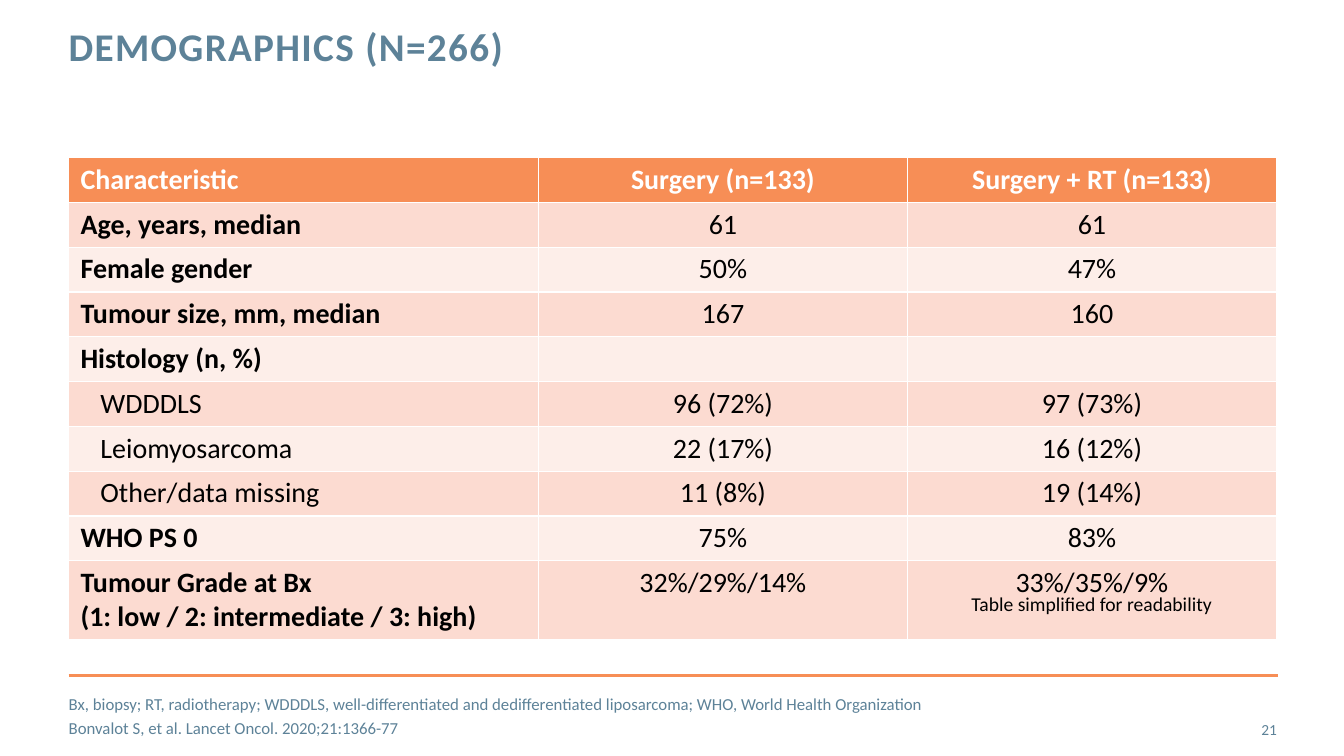
import pptx
import pptx.util
import pptx.dml.color
import pptx.enum.shapes
import pptx.enum.text
import pptx.oxml
import pptx.oxml.ns

Cm, Pt = pptx.util.Cm, pptx.util.Pt
RGBColor = pptx.dml.color.RGBColor
Align = pptx.enum.text.PP_ALIGN
Anchor = pptx.enum.text.MSO_ANCHOR

ORANGE = RGBColor(0xF7, 0x8E, 0x56)
SLATE = RGBColor(0x5D, 0x82, 0x98)
BLACK = RGBColor(0, 0, 0)
WHITE = RGBColor(0xFF, 0xFF, 0xFF)
BANDS = (RGBColor(0xFD, 0xEE, 0xE9), RGBColor(0xFC, 0xDB, 0xD1))

LEFT = 1.73
COLUMN_WIDTHS = (11.84, 9.3, 9.3)
ROW_HEIGHT, LAST_ROW_HEIGHT = 1.13, 1.97
ROWS = [
    ("Characteristic", "Surgery (n=133)", "Surgery + RT (n=133)"),
    ("Age, years, median", "61", "61"),
    ("Female gender", "50%", "47%"),
    ("Tumour size, mm, median", "167", "160"),
    ("Histology (n, %)", "", ""),
    ("WDDDLS", "96 (72%)", "97 (73%)"),
    ("Leiomyosarcoma", "22 (17%)", "16 (12%)"),
    ("Other/data missing", "11 (8%)", "19 (14%)"),
    ("WHO PS 0", "75%", "83%"),
    ("Tumour Grade at Bx\n(1: low / 2: intermediate / 3: high)", "32%/29%/14%", "33%/35%/9%"),
]
SUBTYPES = {"WDDDLS", "Leiomyosarcoma", "Other/data missing"}
FOOTNOTES = (
    "Bx, biopsy; RT, radiotherapy; WDDDLS, well-differentiated and dedifferentiated "
    "liposarcoma; WHO, World Health Organization\n"
    "Bonvalot S, et al. Lancet Oncol. 2020;21:1366-77"
)


def apply(target, values):
    for name, value in values.items():
        setattr(target, name, value)


class SlideBuilder:
    font_name = "Calibri"
    no_margins = dict.fromkeys(("margin_left", "margin_top", "margin_right", "margin_bottom"), 0)

    def __init__(self, page):
        self.page = page

    def fill_text(self, frame, text, size, color, bold=False, align=Align.LEFT, gap=0, indent=0):
        frame.text = text
        for number, para in enumerate(frame.paragraphs):
            properties = para._p.get_or_add_pPr()
            properties.set("marL", str(Cm(indent)))
            properties.set("indent", "0")
            properties.append(pptx.oxml.parse_xml(
                "<a:buNone %s/>" % pptx.oxml.ns.nsdecls("a")))
            apply(para, {"alignment": align, "space_before": Pt(gap if number else 0)})
            for span in para.runs:
                apply(span.font, {"name": self.font_name, "size": Pt(size), "bold": bold})
                span.font.color.rgb = color

    def place(self, shape, left, top, width, height):
        apply(shape, {"left": Cm(left), "top": Cm(top), "width": Cm(width), "height": Cm(height)})

    def title(self, text):
        shape = self.page.shapes.title
        self.place(shape, LEFT, 0.69, 24.28, 2.24)
        frame = shape.text_frame
        apply(frame, {**self.no_margins, "vertical_anchor": Anchor.TOP, "word_wrap": True})
        self.fill_text(frame, text, 28, SLATE, bold=True)
        para = frame.paragraphs[0]
        para.line_spacing = Pt(30)
        para.runs[0]._r.get_or_add_rPr().set("spc", "100")

    def footnotes(self, text):
        shape = self.page.placeholders[1]
        self.place(shape, LEFT, 17.53, 22.56, 1.02)
        frame = shape.text_frame
        apply(frame, {**self.no_margins, "vertical_anchor": Anchor.MIDDLE, "word_wrap": True})
        self.fill_text(frame, text, 12, SLATE, gap=3)

    def text_box(self, text, place, size, color, align, **frame_format):
        box = self.page.shapes.add_textbox(*map(Cm, place))
        apply(box.text_frame, frame_format)
        self.fill_text(box.text_frame, text, size, color, align=align)

    def rule(self, left, right, y):
        line = self.page.shapes.add_connector(
            pptx.enum.shapes.MSO_CONNECTOR.STRAIGHT, Cm(left), Cm(y), Cm(right), Cm(y))
        line.line.color.rgb = ORANGE
        line.line.width = Pt(2)
        line._element.spPr.append(pptx.oxml.parse_xml(
            "<a:effectLst %s/>" % pptx.oxml.ns.nsdecls("a")))

    def table(self, rows, left, top):
        heights = [ROW_HEIGHT] * (len(rows) - 1) + [LAST_ROW_HEIGHT]
        table = self.page.shapes.add_table(
            len(rows), len(COLUMN_WIDTHS), Cm(left), Cm(top),
            Cm(sum(COLUMN_WIDTHS)), Cm(sum(heights))).table
        for column, width in zip(table.columns, COLUMN_WIDTHS):
            column.width = Cm(width)
        for row, height in zip(table.rows, heights):
            row.height = Cm(height)
        for row_number, texts in enumerate(rows):
            header = row_number == 0
            for column_number, text in enumerate(texts):
                cell = table.cell(row_number, column_number)
                label = column_number == 0
                apply(cell, {"margin_left": Cm(0.3), "margin_right": Cm(0.3)})
                cell.fill.solid()
                cell.fill.fore_color.rgb = ORANGE if header else BANDS[row_number % 2]
                subtype = text in SUBTYPES
                self.fill_text(cell.text_frame, text, 20, WHITE if header else BLACK,
                               bold=header or (label and not subtype),
                               align=Align.LEFT if label else Align.CENTER,
                               indent=0.5 if subtype else 0)


def main():
    deck = pptx.Presentation()
    apply(deck, {"slide_width": Cm(33.87), "slide_height": Cm(19.05)})
    slide = SlideBuilder(deck.slides.add_slide(deck.slide_layouts[1]))
    slide.rule(LEFT, 32.2, 17.02)
    slide.table(ROWS, LEFT, 3.97)
    slide.title("DEMOGRAPHICS (N=266)")
    slide.text_box("21", (30, 17.86, 2.18, 1.02), 11, SLATE, Align.RIGHT,
                   **slide.no_margins, vertical_anchor=Anchor.MIDDLE, word_wrap=True)
    slide.footnotes(FOOTNOTES)
    slide.text_box("Table simplified for readability", (24.23, 14.78, 6.65, 0.86), 14, BLACK,
                   Align.LEFT, word_wrap=False,
                   auto_size=pptx.enum.text.MSO_AUTO_SIZE.SHAPE_TO_FIT_TEXT)
    deck.save("out.pptx")


if __name__ == "__main__":
    main()
